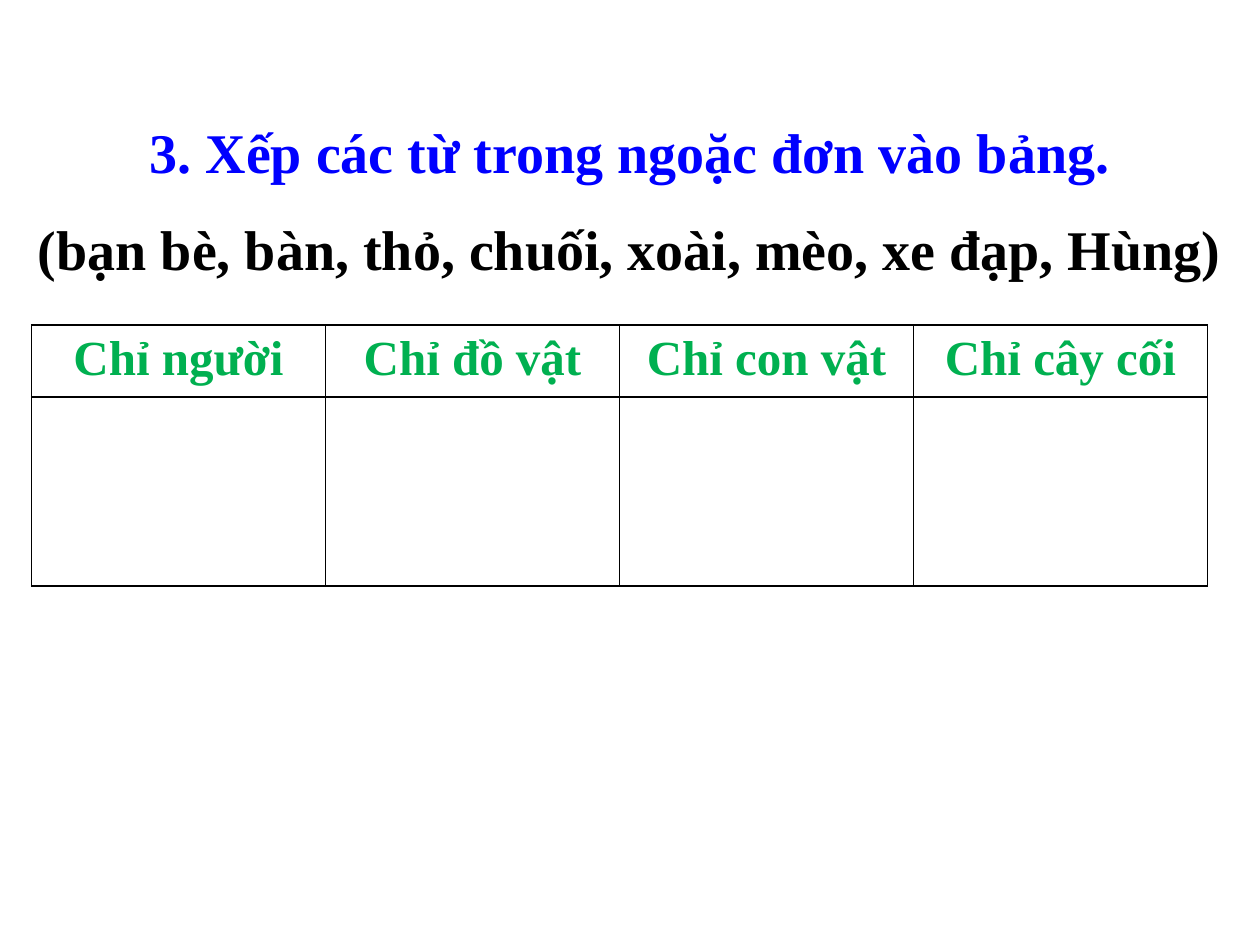
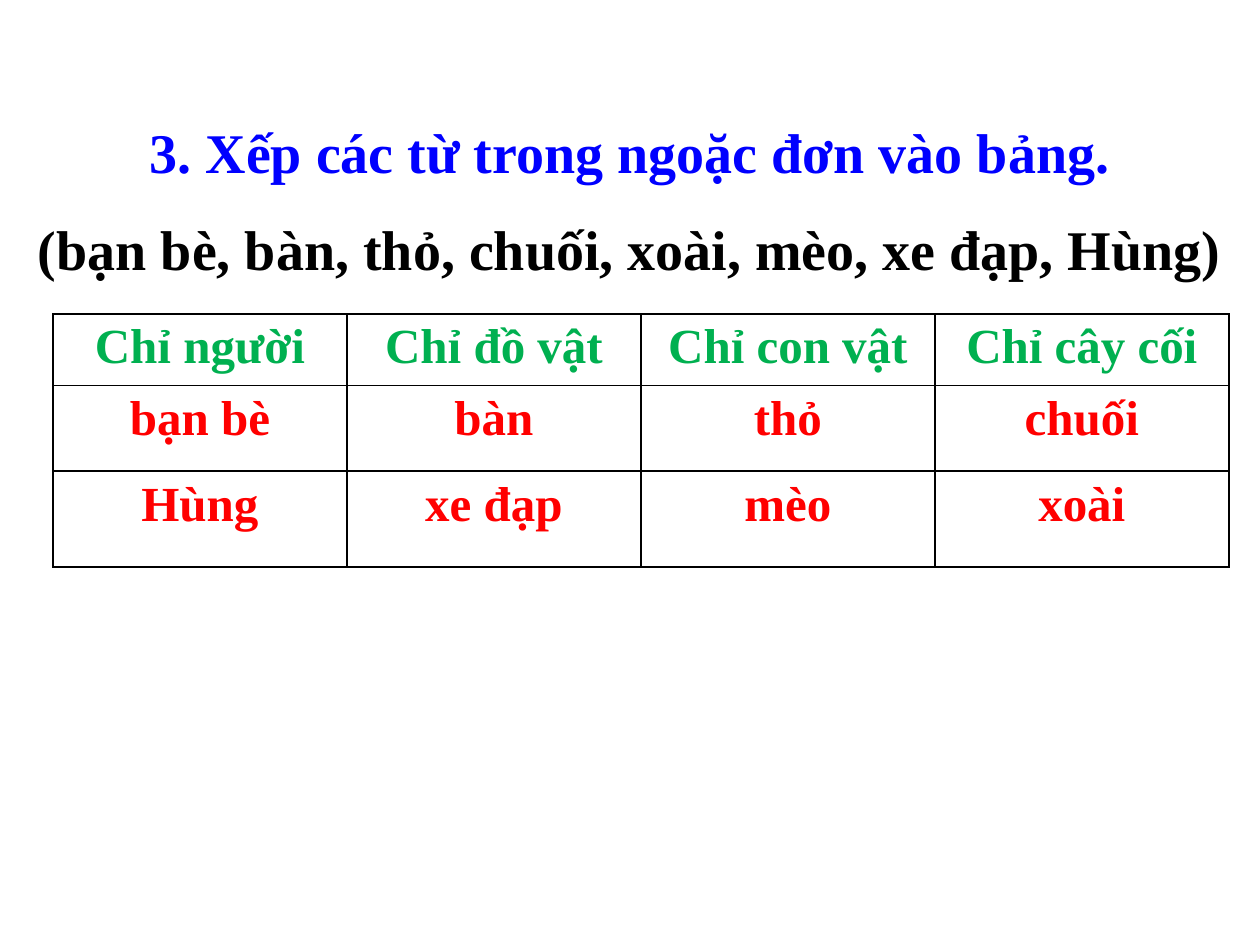
from lxml import etree
from pptx import Presentation, util as u
from pptx.dml.color import RGBColor
from pptx.enum import text
from pptx.oxml import ns

FONT = "Times New Roman"
BLUE, BLACK, GREEN, RED = "0000FF", "000000", "00B050", "FF0000"
QUESTION = "3. Xếp các từ trong ngoặc đơn vào bảng."
WORDS = "(bạn bè, bàn, thỏ, chuối, xoài, mèo, xe đạp, Hùng)"
HEADINGS = ["Chỉ người", "Chỉ đồ vật", "Chỉ con vật", "Chỉ cây cối"]
ANSWERS = [["bạn bè", "bàn", "thỏ", "chuối"], ["Hùng", "xe đạp", "mèo", "xoài"]]
HEADING_HEIGHT = 0.57
COLUMN_WIDTH = 7 / 3


def color(value):
    return RGBColor.from_string(value)


class Lesson:
    """Draws exercise slides in one style on a grid of one-inch columns and rows."""

    def __init__(self):
        self.presentation = Presentation()
        self.presentation.slide_width = u.Inches(10)
        self.presentation.slide_height = u.Inches(7.5)
        self.slide = None

    def add_slide(self):
        self.slide = self.presentation.slides.add_slide(self.presentation.slide_layouts[6])

    def set_text(self, paragraph, words, size, ink):
        paragraph.text = words
        paragraph.alignment = text.PP_ALIGN.CENTER
        font = paragraph.font
        font.name, font.size, font.bold = FONT, u.Pt(size), True
        font.color.rgb = color(ink)

    def exercise(self):
        box = self.slide.shapes.add_textbox(0, u.Inches(0.82), u.Inches(10), u.Inches(1.45))
        frame = box.text_frame
        frame.word_wrap = True
        frame.margin_top = u.Inches(0.11)
        self.set_text(frame.paragraphs[0], QUESTION, 32, BLUE)
        word_list = frame.add_paragraph()
        self.set_text(word_list, WORDS, 32, BLACK)
        word_list.space_before = u.Pt(17.5)

    def border(self, cell):
        properties = cell._tc.get_or_add_tcPr()
        for position, side in enumerate(("lnL", "lnR", "lnT", "lnB")):
            line = etree.Element(ns.qn(f"a:{side}"), w=str(u.Pt(1)))
            fill = etree.SubElement(line, ns.qn("a:solidFill"))
            etree.SubElement(fill, ns.qn("a:srgbClr"), val=BLACK)
            properties.insert(position, line)

    def word_table(self, left, top, rows, answer_heights):
        heights = [HEADING_HEIGHT, *answer_heights]
        shape = self.slide.shapes.add_table(
            len(rows), len(HEADINGS), u.Inches(left), u.Inches(top),
            u.Inches(COLUMN_WIDTH * len(HEADINGS)), u.Inches(sum(heights)))
        table = shape.table
        table.first_row = table.horz_banding = False
        for column in table.columns:
            column.width = u.Inches(COLUMN_WIDTH)
        for row, height, words in zip(table.rows, heights, rows):
            row.height = u.Inches(height)
            for cell, word in zip(row.cells, words):
                cell.fill.background()
                self.border(cell)
                if word:
                    ink = GREEN if words is HEADINGS else RED
                    self.set_text(cell.text_frame.paragraphs[0], word, 28, ink)


def main():
    lesson = Lesson()
    lesson.add_slide()
    lesson.exercise()
    lesson.word_table(0.25, 2.58, [HEADINGS, [""] * len(HEADINGS)], [1.5])
    lesson.add_slide()
    lesson.word_table(0.42, 2.49, [HEADINGS, *ANSWERS], [0.68, 0.76])
    lesson.exercise()
    lesson.presentation.save("out.pptx")


if __name__ == "__main__":
    main()
